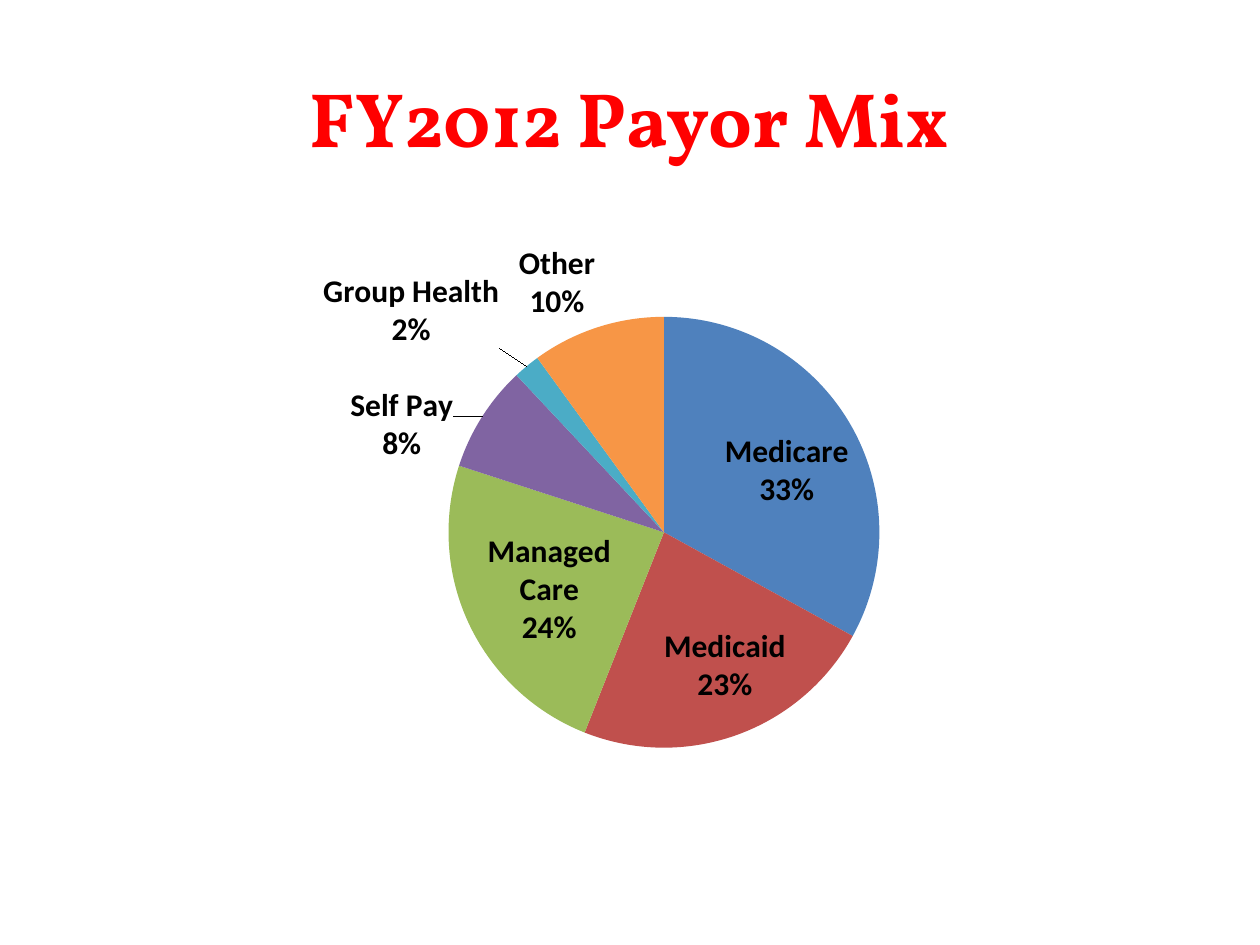
from lxml import etree
from pptx import Presentation
from pptx.chart.data import CategoryChartData
from pptx.dml.color import RGBColor
from pptx.enum.chart import XL_CHART_TYPE as ChartType, XL_LABEL_POSITION as LabelPosition
from pptx.enum.text import MSO_ANCHOR as Anchor, PP_ALIGN as Align
from pptx.oxml import parse_xml
from pptx.oxml.ns import nsdecls, qn
from pptx.util import Inches, Pt

# Category, share in percent, slice colour
PAYORS = [
    ("Medicare", 33, "4F81BD"),
    ("Medicaid", 23, "C0504D"),
    ("Managed Care", 24, "9BBB59"),
    ("Self Pay", 8, "8064A2"),
    ("Group Health", 2, "4BACC6"),
    ("Other", 10, "F79646"),
]
# Label shifts as fractions of the chart, by category
LABEL_SHIFTS = {"Self Pay": (-0.02, 0.08), "Group Health": (-0.02, -0.02)}
PIE_AREA = {"x": 0.34, "y": 0.15, "w": 0.38, "h": 0.7}


def color(value):
    return RGBColor.from_string(value)


def set_font(font, name="Calibri", size=18, fill="000000", bold=True):
    font.name, font.size, font.bold = name, Pt(size), bold
    font.color.rgb = color(fill)


def write_text(box, text, align=Align.CENTER, anchor=Anchor.MIDDLE, **font_format):
    frame = box.text_frame
    frame.word_wrap = True
    frame.vertical_anchor = anchor
    para = frame.paragraphs[0]
    para.alignment = align
    span = para.add_run()
    span.text = text
    set_font(span.font, **font_format)


def manual_layout(target="", modes=False, **lengths):
    layout = parse_xml(f"<c:layout {nsdecls('c')}><c:manualLayout/></c:layout>")
    settings = [("layoutTarget", target)] if target else []
    if modes:
        settings += [("xMode", "edge"), ("yMode", "edge")]
    for tag, value in settings + list(lengths.items()):
        etree.SubElement(layout[0], qn(f"c:{tag}")).set("val", str(value))
    return layout


def show_name_and_percent(labels):
    for tag, value in (("showVal", "0"), ("showCatName", "1"), ("showPercent", "1")):
        labels.find(qn(f"c:{tag}")).set("val", value)
    separator = parse_xml(f"<c:separator {nsdecls('c')}>\n</c:separator>")
    labels.find(qn("c:showBubbleSize")).addnext(separator)


class SlideBuilder:
    def __init__(self, page):
        self.page = page

    def title(self, text, left, top, width, height):
        box = self.page.shapes.add_textbox(
            Inches(left), Inches(top), Inches(width), Inches(height))
        write_text(box, text, name="Vollkorn", size=44, fill="FF0000")

    def pie(self, payors, left, top, width, height):
        data = CategoryChartData()
        data.categories = [name for name, _, _ in payors]
        data.add_series("Series 1", [share for _, share, _ in payors])
        chart = self.page.shapes.add_chart(
            ChartType.PIE, Inches(left), Inches(top),
            Inches(width), Inches(height), data).chart
        chart.has_legend = chart.has_title = False
        set_font(chart.font, size=10, bold=False)
        plot = chart.plots[0]
        plot.vary_by_categories = True
        series = plot.series[0]

        # Shared label style
        labels = series.data_labels
        labels.number_format = "0%"
        labels.number_format_is_linked = False
        labels.position = LabelPosition.BEST_FIT
        set_font(labels.font)
        label_list = series._element.find(qn("c:dLbls"))
        show_name_and_percent(label_list)

        # Slices and shifted labels
        for index, (name, _, fill) in enumerate(payors):
            point = series.points[index]
            point.format.fill.solid()
            point.format.fill.fore_color.rgb = color(fill)
            if name in LABEL_SHIFTS:
                label = point.data_label
                set_font(label.font)
                label.position = LabelPosition.BEST_FIT
                element = label_list.findall(qn("c:dLbl"))[-1]
                shift_x, shift_y = LABEL_SHIFTS[name]
                element.find(qn("c:idx")).addnext(manual_layout(x=shift_x, y=shift_y))
                show_name_and_percent(element)

        # Pie position inside the chart
        area = chart._chartSpace.chart.plotArea
        for old in area.findall(qn("c:layout")):
            area.remove(old)
        area.insert(0, manual_layout("inner", modes=True, **PIE_AREA))


def main():
    deck = Presentation()
    deck.slide_width, deck.slide_height = Inches(10), Inches(7.5)
    builder = SlideBuilder(deck.slides.add_slide(deck.slide_layouts[6]))
    builder.title("FY2012 Payor Mix", 0.5, 0.3, 9, 1.25)
    builder.pie(PAYORS, 0.5, 1.75, 9, 4.95)
    deck.save("out.pptx")


if __name__ == "__main__":
    main()
